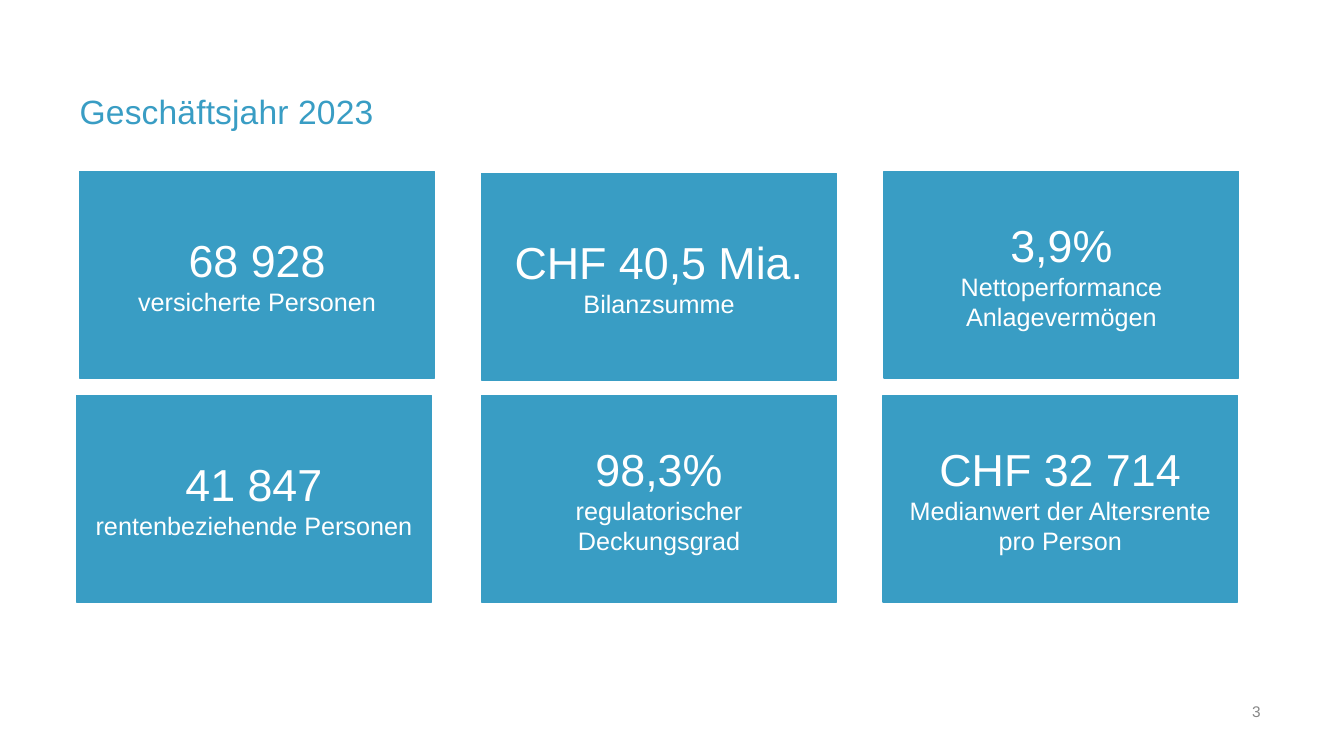
from pptx import Presentation
from pptx.dml.color import RGBColor
from pptx.enum.shapes import MSO_SHAPE
from pptx.enum.text import MSO_ANCHOR, PP_ALIGN
from pptx.util import Cm, Pt

RECTANGLE = MSO_SHAPE.RECTANGLE
MIDDLE, BOTTOM = MSO_ANCHOR.MIDDLE, MSO_ANCHOR.BOTTOM
LEFT, CENTER, RIGHT = PP_ALIGN.LEFT, PP_ALIGN.CENTER, PP_ALIGN.RIGHT

BLUE = RGBColor(0x39, 0x9D, 0xC4)
GREY = RGBColor(0x87, 0x87, 0x87)
WHITE = RGBColor(0xFF, 0xFF, 0xFF)

TILE_WIDTH, TILE_HEIGHT, TILE_INSET = 8.94, 5.21, 0.38

# left, top (cm), key figure, caption
TILES = [
    (2.01, 4.32, "68 928", "versicherte Personen"),
    (12.14, 4.37, "CHF 40,5 Mia.", "Bilanzsumme"),
    (22.28, 4.32, "3,9%", "Nettoperformance Anlagevermögen"),
    (1.93, 9.96, "41 847", "rentenbeziehende Personen"),
    (12.14, 9.96, "98,3%", "regulatorischer Deckungsgrad"),
    (22.25, 9.96, "CHF 32 714", "Medianwert der Altersrente pro Person"),
]


def style_paragraph(para, text, size, color, alignment):
    para.text = text
    para.alignment = alignment
    para.font.name = "Arial"
    para.font.size = Pt(size)
    para.font.color.rgb = color


def add_label(page, left, top, width, height, text, size, color, alignment):
    """Add a one-line text box without insets, set on its bottom edge."""
    box = page.shapes.add_textbox(Cm(left), Cm(top), Cm(width), Cm(height))
    frame = box.text_frame
    frame.word_wrap = True
    frame.vertical_anchor = BOTTOM
    frame.margin_left = frame.margin_right = Cm(0)
    frame.margin_top = frame.margin_bottom = Cm(0)
    para = frame.paragraphs[0]
    style_paragraph(para, text, size, color, alignment)
    return para


def add_tile(page, left, top, figure, caption):
    tile = page.shapes.add_shape(
        RECTANGLE, Cm(left), Cm(top), Cm(TILE_WIDTH), Cm(TILE_HEIGHT))
    tile.shadow.inherit = False
    tile.fill.solid()
    tile.fill.fore_color.rgb = BLUE
    tile.line.color.rgb = BLUE
    tile.line.width = Pt(1)
    frame = tile.text_frame
    frame.word_wrap = True
    frame.vertical_anchor = MIDDLE
    frame.margin_left = frame.margin_right = Cm(TILE_INSET)
    style_paragraph(frame.paragraphs[0], figure, 32, WHITE, CENTER)
    style_paragraph(frame.add_paragraph(), caption, 18, WHITE, CENTER)


def main():
    deck = Presentation()
    deck.slide_width, deck.slide_height = Cm(33.87), Cm(19.05)
    page = deck.slides.add_slide(deck.slide_layouts[6])

    title = add_label(page, 2.01, 2.21, 24.74, 1.12,
                      "Geschäftsjahr 2023", 24, BLUE, LEFT)
    title.line_spacing = 0.9
    title.runs[0].font._element.set("spc", "10")
    add_label(page, 28.32, 17.68, 3.45, 0.48, "3", 11, GREY, RIGHT)

    for tile in TILES:
        add_tile(page, *tile)

    deck.save("out.pptx")


if __name__ == "__main__":
    main()
